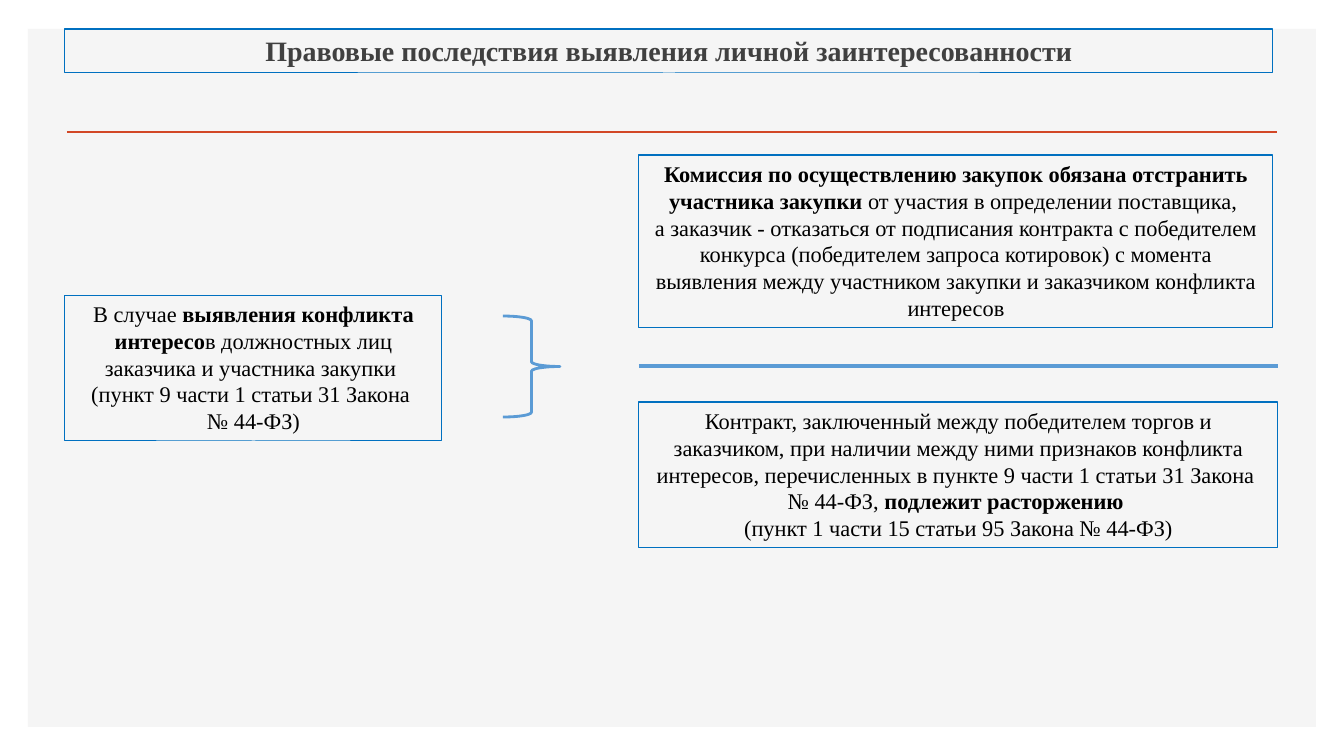
from lxml import etree
from pptx import Presentation
from pptx.dml.color import RGBColor
from pptx.enum.shapes import MSO_CONNECTOR, MSO_SHAPE
from pptx.enum.text import MSO_ANCHOR, MSO_AUTO_SIZE, PP_ALIGN
from pptx.oxml.ns import qn
from pptx.util import Pt

PX = 914400 / 100.8
RECT, BRACE = MSO_SHAPE.RECTANGLE, MSO_SHAPE.RIGHT_BRACE
STRAIGHT = MSO_CONNECTOR.STRAIGHT
CENTER, TOP = PP_ALIGN.CENTER, MSO_ANCHOR.TOP
GROW = MSO_AUTO_SIZE.SHAPE_TO_FIT_TEXT
FONT = "Times New Roman"
COLORS = {
    "panel": "F5F5F5", "accent": "D24726", "border": "0070C0",
    "blue": "5B9BD5", "title": "404040", "text": "000000",
}

prs = Presentation()
prs.slide_width, prs.slide_height = round(1344 * PX), round(756 * PX)
slide = prs.slides.add_slide(prs.slide_layouts[6])


def color(name):
    return RGBColor.from_string(COLORS[name])


def add_text_box(area, paragraphs, size=16, ink="text"):
    """Each paragraph is a list of (text, bold) runs; "\\n" is a line break."""
    box = slide.shapes.add_shape(RECT, *(round(v * PX) for v in area))
    box.shadow.inherit = False
    box.fill.background()
    box.line.color.rgb = color("border")
    box.line.width = Pt(0.75)
    frame = box.text_frame
    frame.word_wrap = True
    frame.auto_size = GROW
    frame.vertical_anchor = TOP
    for index, runs in enumerate(paragraphs):
        paragraph = frame.add_paragraph() if index else frame.paragraphs[0]
        paragraph.alignment = CENTER
        for text, bold in runs:
            for part, piece in enumerate(text.split("\n")):
                if part:
                    paragraph.add_line_break()
                run = paragraph.add_run()
                run.text = piece
                run.font.name = FONT
                run.font.size = Pt(size)
                run.font.bold = bold
                run.font.color.rgb = color(ink)


# Background panel
panel = slide.shapes.add_shape(RECT, *(round(v * PX) for v in (28, 29, 1288, 698)))
panel.shadow.inherit = False
panel.fill.solid()
panel.fill.fore_color.rgb = color("panel")
panel.line.fill.background()

# Rules under the title and between the two consequences
for left, right, y, name, width in [
    (67, 1277, 132, "accent", 2),
    (639, 1278, 366, "blue", 2.25),
]:
    rule = slide.shapes.add_connector(
        STRAIGHT, *(round(v * PX) for v in (left, y, right, y)))
    rule.line.color.rgb = color(name)
    rule.line.width = Pt(width)
    etree.SubElement(rule.element.spPr, qn("a:effectLst"))

# Title
add_text_box((65, 29, 1208, 44), [
    [("Правовые последствия выявления личной заинтересованности", True)],
], size=20, ink="title")

# Condition
add_text_box((65, 295, 377, 146), [
    [("В случае ", False),
     ("выявления конфликта интересо", True),
     ("в должностных лиц заказчика и участника закупки ", False)],
    [("(пункт 9 части 1 статьи 31 Закона ", False)],
    [("№ 44-ФЗ)", False)],
])

# Brace from the condition to its consequences
brace = slide.shapes.add_shape(BRACE, *(round(v * PX) for v in (503, 316, 57, 101)))
brace.shadow.inherit = False
brace.fill.background()
brace.line.color.rgb = color("blue")
brace.line.width = Pt(2)

# Consequences
add_text_box((639, 155, 634, 173), [
    [("Комиссия по осуществлению закупок обязана отстранить участника закупки ", True),
     ("от участия в определении поставщика, ", False)],
    [("а заказчик - отказаться от подписания контракта с победителем конкурса "
      "(победителем запроса котировок) с момента выявления между участником "
      "закупки и заказчиком конфликта интересов", False)],
])
add_text_box((639, 402, 639, 146), [
    [("Контракт, заключенный между победителем торгов и заказчиком, при наличии "
      "между ними признаков конфликта интересов, перечисленных в пункте 9 части 1 "
      "статьи 31 Закона \n№ 44-ФЗ, ", False),
     ("подлежит расторжению ", True)],
    [("(пункт 1 части 15 статьи 95 Закона № 44-ФЗ)", False)],
])

prs.save("out.pptx")
